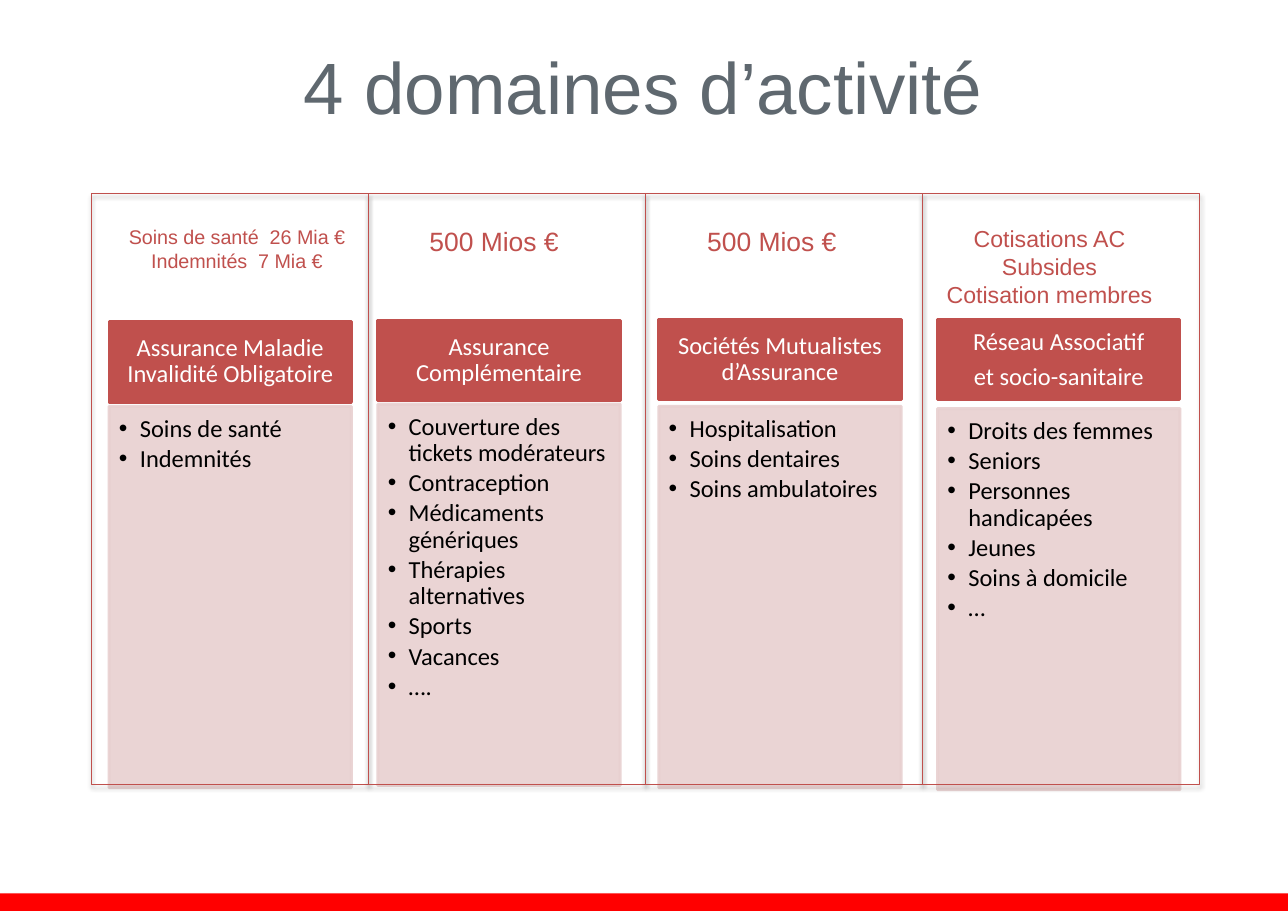
from lxml import etree
from pptx import Presentation
from pptx.dml.color import RGBColor
from pptx.enum import shapes, text
from pptx.oxml import ns
from pptx.util import Inches, Pt

COLOURS = {
    "title": "5F686F",
    "accent": "C0504D",
    "panel": "E8D0D0",
    "footer": "FF0000",
    "white": "FFFFFF",
    "black": "000000",
    "grey": "808080",
}

FRAME_LEFT, FRAME_TOP = 0.83, 1.76
FRAME_WIDTH, FRAME_HEIGHT = 2.515, 5.36
CARD_WIDTH, HEADER_HEIGHT, PANEL_HEIGHT = 2.2, 0.73, 3.46

# Each domain: amount box (left, width, height), amount size and lines,
# card left, header top, panel top, header lines, panel items
DOMAINS = [
    ((0.99, 2.32, 0.54), 12.9,
     ["Soins de santé  26 Mia €", "Indemnités  7 Mia €"],
     0.99, 2.92, 3.69, ["Assurance Maladie Invalidité Obligatoire"],
     ["Soins de santé", "Indemnités"]),
    ((3.41, 2.15, 0.39), 17.3, ["500 Mios €"],
     3.43, 2.91, 3.67, ["Assurance Complémentaire"],
     ["Couverture des tickets modérateurs", "Contraception",
      "Médicaments génériques", "Thérapies alternatives", "Sports",
      "Vacances", "…."]),
    ((5.93, 2.15, 0.39), 17.3, ["500 Mios €"],
     5.98, 2.9, 3.69, ["Sociétés Mutualistes d’Assurance"],
     ["Hospitalisation", "Soins dentaires", "Soins ambulatoires"]),
    ((8.45, 2.15, 0.86), 15.1,
     ["Cotisations AC", "Subsides", "Cotisation membres"],
     8.51, 2.9, 3.71, ["Réseau Associatif", "et socio-sanitaire"],
     ["Droits des femmes", "Seniors", "Personnes handicapées", "Jeunes",
      "Soins à domicile", "…"]),
]


def rgb(name):
    return RGBColor.from_string(COLOURS[name])


def add_child(parent, tag, **attributes):
    return etree.SubElement(parent, ns.qn(tag), attributes)


def add_rectangle(slide, box, fill=None, line=None, line_width=2):
    shape = slide.shapes.add_shape(
        shapes.MSO_SHAPE.RECTANGLE, *map(Inches, box))
    shape.shadow.inherit = False
    if fill:
        shape.fill.solid()
        shape.fill.fore_color.rgb = rgb(fill)
    else:
        shape.fill.background()
    if line:
        shape.line.color.rgb = rgb(line)
        shape.line.width = Pt(line_width)
    else:
        shape.line.fill.background()
    return shape


def add_drop_shadow(shape, colour):
    effects = shape._element.spPr.find(ns.qn("a:effectLst"))
    shadow = add_child(effects, "a:outerShdw", blurRad=str(Pt(3.1)),
                       dist=str(Pt(1.8)), dir="5400000", rotWithShape="0")
    shadow_colour = add_child(shadow, "a:srgbClr", val=COLOURS[colour])
    add_child(shadow_colour, "a:alpha", val="35000")


def set_opacity(shape, percent):
    """Apply one opacity to both the fill and the line."""
    for colour in shape._element.spPr.iter(ns.qn("a:srgbClr")):
        add_child(colour, "a:alpha", val=str(percent * 1000))


def add_bullet(paragraph):
    properties = paragraph._p.get_or_add_pPr()
    properties.set("marL", str(Inches(0.19)))
    properties.set("indent", str(Inches(-0.19)))
    add_child(properties, "a:buFont", typeface="Arial")
    add_child(properties, "a:buChar", char="•")


def write_lines(shape, lines, size, font, colour, centred=True, bullets=False,
                anchor=text.MSO_ANCHOR.TOP, insets=(0.1, 0.05, 0.1, 0.05),
                line_spacing=1.0, space_after=0):
    frame = shape.text_frame
    frame.word_wrap = True
    frame.vertical_anchor = anchor
    (frame.margin_left, frame.margin_top,
     frame.margin_right, frame.margin_bottom) = map(Inches, insets)
    for index, line in enumerate(lines):
        paragraph = frame.add_paragraph() if index else frame.paragraphs[0]
        if bullets:
            add_bullet(paragraph)
        paragraph.alignment = (
            text.PP_ALIGN.CENTER if centred else text.PP_ALIGN.LEFT)
        paragraph.line_spacing = line_spacing
        paragraph.space_after = Pt(space_after)
        run = paragraph.add_run()
        run.text = line
        run.font.size = Pt(size)
        run.font.name = font
        run.font.color.rgb = rgb(colour)


def add_label(slide, box, lines, size, colour):
    label = slide.shapes.add_textbox(*map(Inches, box))
    write_lines(label, lines, size, "Arial", colour)


def add_card(slide, left, header_top, panel_top, header_lines, items):
    header = add_rectangle(
        slide, (left, header_top, CARD_WIDTH, HEADER_HEIGHT),
        "accent", "accent")
    write_lines(header, header_lines, 16, "Calibri", "white",
                anchor=text.MSO_ANCHOR.MIDDLE, insets=(0.12, 0.07, 0.12, 0.07),
                line_spacing=0.9, space_after=5.6)
    panel = add_rectangle(
        slide, (left, panel_top, CARD_WIDTH, PANEL_HEIGHT), "panel", "panel")
    set_opacity(panel, 90)
    write_lines(panel, items, 16, "Calibri", "black", centred=False,
                bullets=True, insets=(0.09, 0.09, 0.12, 0.14),
                line_spacing=0.9, space_after=2.4)


def add_frame(slide, column):
    left = FRAME_LEFT + column * FRAME_WIDTH
    frame = add_rectangle(slide, (left, FRAME_TOP, FRAME_WIDTH, FRAME_HEIGHT),
                          line="accent", line_width=0.75)
    add_drop_shadow(frame, "black")


def main():
    presentation = Presentation()
    presentation.slide_width = Inches(11.69)
    presentation.slide_height = Inches(8.27)
    slide = presentation.slides.add_slide(presentation.slide_layouts[6])

    footer = add_rectangle(slide, (0, 8.11, 11.69, 0.16), "footer")
    add_drop_shadow(footer, "grey")
    add_label(slide, (0.58, 0.33, 10.52, 1.38), ["4 domaines d’activité"],
              47.5, "title")

    for _, _, _, *card in DOMAINS:
        add_card(slide, *card)
    for column, (box, size, amounts, *_) in enumerate(DOMAINS):
        add_frame(slide, column)
        left, width, height = box
        add_label(slide, (left, 1.99, width, height), amounts, size, "accent")

    presentation.save("out.pptx")


if __name__ == "__main__":
    main()
